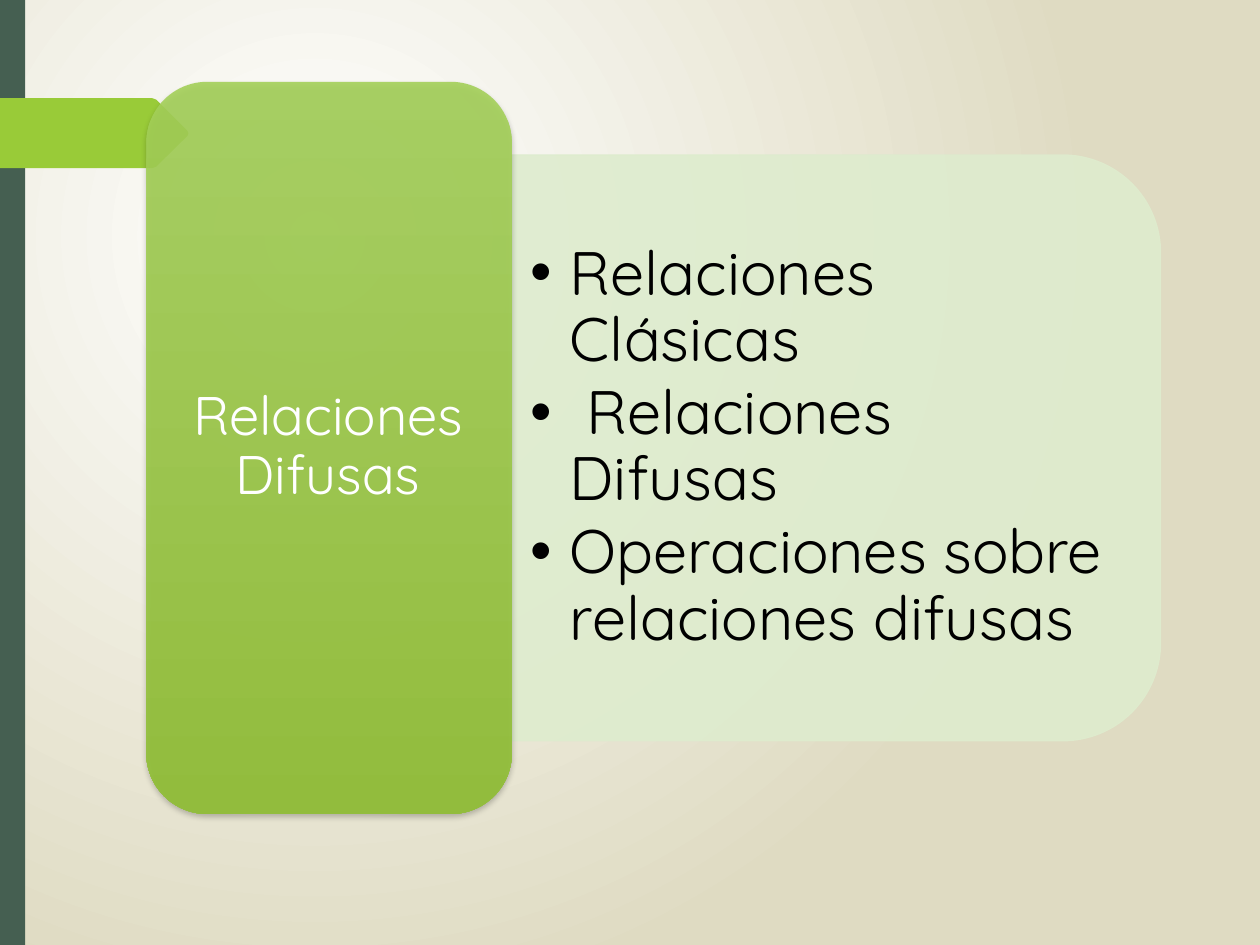
"""Build the slide that outlines the unit on fuzzy relations."""
from lxml.etree import SubElement
from pptx import Presentation
from pptx.dml.color import RGBColor
from pptx.enum.shapes import MSO_SHAPE as Shape
from pptx.enum.text import MSO_ANCHOR as Anchor, PP_ALIGN as Align
from pptx.oxml.ns import qn
from pptx.util import Cm, Pt


def color(code):
    return RGBColor.from_string(code)


def write(lines, left, top, width, height, size, ink, gap,
          align=Align.LEFT, inset=(0.36, 0.18), bullet=None, indent=0.8):
    box = page.shapes.add_textbox(Cm(left), Cm(top), Cm(width), Cm(height))
    frame = box.text_frame
    frame.word_wrap = True
    frame.vertical_anchor = Anchor.MIDDLE
    frame.margin_left = frame.margin_right = Cm(inset[0])
    frame.margin_top = frame.margin_bottom = Cm(inset[1])
    for index, line in enumerate(lines):
        para = frame.add_paragraph() if index else frame.paragraphs[0]
        para.alignment = align
        para.line_spacing = 0.9
        para.space_after = Pt(gap)
        span = para.add_run()
        span.text = line
        span.font.name = "Quicksand"
        span.font.size = Pt(size)
        span.font.color.rgb = color(ink)
        if bullet:
            props = para._p.get_or_add_pPr()
            props.set("marL", str(Cm(indent)))
            props.set("indent", str(-Cm(indent)))
            SubElement(props, qn("a:buFont"), typeface="Arial")
            SubElement(props, qn("a:buChar"), char=bullet)


deck = Presentation()
deck.slide_width, deck.slide_height = Cm(25.4), Cm(19.05)
page = deck.slides.add_slide(deck.slide_layouts[6])

backdrop = page.background.fill
backdrop.gradient()
for stop, code, position in zip(backdrop.gradient_stops, ("FFFFFF", "DFDBC2"), (0, 1)):
    stop.color.rgb = color(code)
    stop.position = position
linear = page.element.find(".//" + qn("a:lin"))
radial = SubElement(linear.getparent(), qn("a:path"), path="circle")
SubElement(radial, qn("a:fillToRect"), l="50000", t="50000", r="100000", b="100000")
linear.getparent().replace(linear, radial)

stripe = page.shapes.add_shape(Shape.RECTANGLE, 0, 0, Cm(0.51), deck.slide_height)
outline = page.shapes.build_freeform(0, Cm(1.98), scale=1.0)
points = [(3.07, 1.98), (3.15, 2.01), (3.78, 2.64), (3.8, 2.69), (3.78, 2.74),
          (3.15, 3.36), (3.07, 3.39), (0, 3.39)]
outline.add_line_segments([(Cm(x), Cm(y)) for x, y in points], close=True)
arrow = outline.convert_to_shape()
panel = page.shapes.add_shape(Shape.ROUND_2_SAME_RECTANGLE,
                              Cm(10.95), Cm(2.49), Cm(11.81), Cm(13.08))
panel.rotation = 90
card = page.shapes.add_shape(Shape.ROUNDED_RECTANGLE,
                             Cm(2.95), Cm(1.65), Cm(7.37), Cm(14.76))

for shape, code in ((stripe, "455F51"), (arrow, "99CB38"), (panel, "DEECCE")):
    shape.shadow.inherit = False
    shape.fill.solid()
    shape.fill.fore_color.rgb = color(code)
    shape.line.fill.background()
panel.line.color.rgb = color("DEECCE")
panel.line.width = Pt(0.75)

card.line.fill.background()
card.fill.gradient()
card.fill.gradient_angle = 270
for stop, code, position in zip(card.fill.gradient_stops, ("A4D059", "8FBE33"), (0, 1)):
    stop.color.rgb = color(code)
    stop.position = position

for shape in (panel, card):
    for tint in shape.element.spPr.iter(qn("a:srgbClr")):
        SubElement(tint, qn("a:alpha"), val="90000")

card.shadow.inherit = False
effects = card.element.spPr.find(qn("a:effectLst"))
shade = SubElement(effects, qn("a:outerShdw"), blurRad=str(Pt(3)), dist=str(Pt(2)),
                   dir="5400000", rotWithShape="0")
shade_color = SubElement(shade, qn("a:srgbClr"), val="000000")
SubElement(shade_color, qn("a:alpha"), val="25000")

write(["Relaciones Clásicas", " Relaciones Difusas", "Operaciones sobre relaciones difusas"],
      10.31, 3.71, 12.5, 10.64, size=35, ink="000000", gap=4, inset=(0.38, 0.18), bullet="•")
write(["Relaciones Difusas"], 3.3, 2.01, 6.63, 14.02, size=31, ink="FFFFFF", gap=0,
      align=Align.CENTER, inset=(0.33, 0.15))

deck.save("out.pptx")
